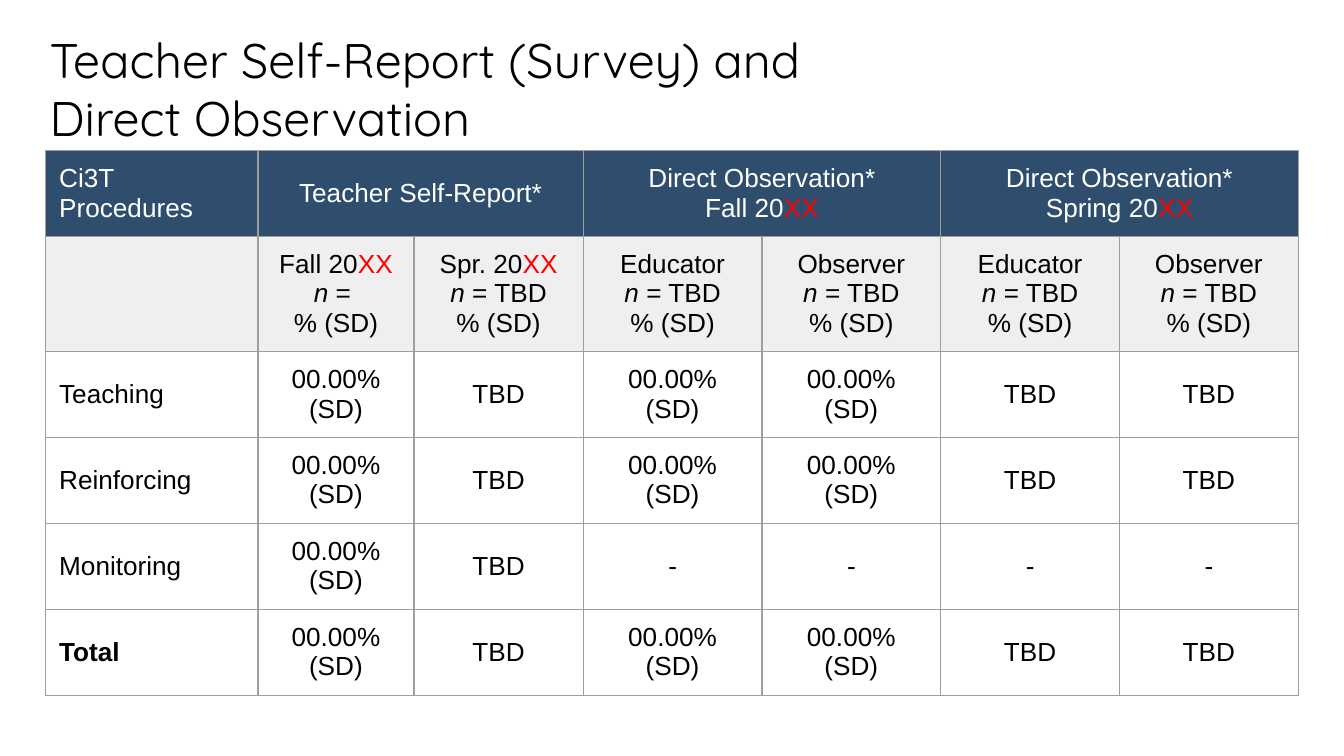
from lxml.etree import SubElement
from pptx import Presentation
from pptx.dml.color import RGBColor
from pptx.enum.text import MSO_ANCHOR, MSO_AUTO_SIZE, PP_ALIGN
from pptx.oxml.ns import qn
from pptx.util import Inches, Pt

NAVY, GREY, RED, WHITE, BLACK = "2F4E6D", "EFEFEF", "FF0000", "FFFFFF", "000000"
BORDER = "9E9E9E"
COLUMN_WIDTHS = [1.58, 1.16, 1.26] + [1.33] * 4
ROW_HEIGHTS = [0.34, 0.66] + [0.64] * 4
SCORE = "00.00%\n(SD)"
SCORES = [SCORE, "TBD", SCORE, SCORE, "TBD", "TBD"]
SUBHEADS = [f"{name}\nn = TBD\n% (SD)" for name in ("Educator", "Observer")]
ROWS = [
    ["Ci3T Procedures", "Teacher Self-Report*", "", "Direct Observation*\nFall 20XX", "",
     "Direct Observation*\nSpring 20XX", ""],
    ["", "Fall 20XX\nn = \n% (SD)", "Spr. 20XX\vn = TBD\n% (SD)"] + SUBHEADS * 2,
    ["Teaching"] + SCORES,
    ["Reinforcing"] + SCORES,
    ["Monitoring", SCORE, "TBD"] + ["-"] * 4,
    ["Total"] + SCORES,
]


def rgb(value):
    """Turn a hex string into a colour."""
    return RGBColor.from_string(value)


def set_margins(item):
    """Give a cell or text frame even inner margins."""
    item.margin_left = item.margin_right = Inches(0.1)
    item.margin_top = item.margin_bottom = Inches(0.1)


def format_span(span, font_name, size, color):
    """Set the font, size and colour of a run."""
    span.font.name = font_name
    span.font.size = Pt(size)
    span.font.color.rgb = rgb(color)


def add_title(page, left, top, width, height):
    """Place the two-line heading."""
    title = page.shapes.title
    title.left, title.top = Inches(left), Inches(top)
    title.width, title.height = Inches(width), Inches(height)
    frame = title.text_frame
    frame.text = "Teacher Self-Report (Survey) and\vDirect Observation"
    frame.auto_size = MSO_AUTO_SIZE.NONE
    frame.vertical_anchor = MSO_ANCHOR.TOP
    set_margins(frame)
    paragraph = frame.paragraphs[0]
    paragraph.alignment = PP_ALIGN.LEFT
    paragraph.line_spacing = 1.0
    for span in paragraph.runs:
        format_span(span, "Quicksand", 26, BLACK)


def add_borders(cell):
    """Draw a thin line on each side of a cell."""
    properties = cell._tc.get_or_add_tcPr()
    for side in ("a:lnL", "a:lnR", "a:lnT", "a:lnB"):
        line = SubElement(properties, qn(side), w=str(Pt(0.75)))
        fill = SubElement(line, qn("a:solidFill"))
        SubElement(fill, qn("a:srgbClr"), val=BORDER)


def split_line(line):
    """Separate the year blank or the sample symbol from a line."""
    if line.endswith("XX"):
        return [line[:-2], "XX"]
    if line.startswith("n ="):
        return ["n", line[1:]]
    return [line]


def write_line(paragraph, line, color):
    """Add one line of cell text as formatted runs."""
    for part in split_line(line):
        span = paragraph.add_run()
        span.text = part
        format_span(span, "Arial", 14, RED if part == "XX" else color)
        span.font.italic = part == "n"
        span.font.bold = part == "Total"


def fill_cell(cell, text, row, column):
    """Write and format one cell by its row and column."""
    add_borders(cell)
    if row < 2:
        cell.fill.solid()
        cell.fill.fore_color.rgb = rgb((NAVY, GREY)[row])
    else:
        cell.fill.background()
    set_margins(cell)
    corner = row == 0 and column == 0
    cell.vertical_anchor = MSO_ANCHOR.TOP if corner else MSO_ANCHOR.MIDDLE
    frame = cell.text_frame
    for index, block in enumerate(text.split("\n")):
        paragraph = frame.add_paragraph() if index else frame.paragraphs[0]
        paragraph.alignment = PP_ALIGN.CENTER if column else PP_ALIGN.LEFT
        paragraph.font.size = Pt(14)
        for position, line in enumerate(block.split("\v") if block else []):
            if position:
                paragraph.add_line_break()
            write_line(paragraph, line, BLACK if row else WHITE)


def add_results_table(page, left, top):
    """Place the table of survey and observation results."""
    frame = page.shapes.add_table(
        len(ROWS), len(COLUMN_WIDTHS), Inches(left), Inches(top),
        Inches(sum(COLUMN_WIDTHS)), Inches(sum(ROW_HEIGHTS)))
    table = frame.table
    table.first_row = table.horz_banding = False
    for column, width in zip(table.columns, COLUMN_WIDTHS):
        column.width = Inches(width)
    for row, height in zip(table.rows, ROW_HEIGHTS):
        row.height = Inches(height)
    for row, texts in enumerate(ROWS):
        for column, text in enumerate(texts):
            fill_cell(table.cell(row, column), text, row, column)
    for column in (1, 3, 5):
        table.cell(0, column).merge(table.cell(0, column + 1))


def main():
    """Build and save the slide."""
    deck = Presentation()
    deck.slide_width = Inches(10)
    deck.slide_height = deck.slide_width * 9 // 16
    page = deck.slides.add_slide(deck.slide_layouts[5])
    add_title(page, 0.27, 0.12, 8.67, 0.63)
    add_results_table(page, 0.34, 1.12)
    deck.save("out.pptx")


if __name__ == "__main__":
    main()
